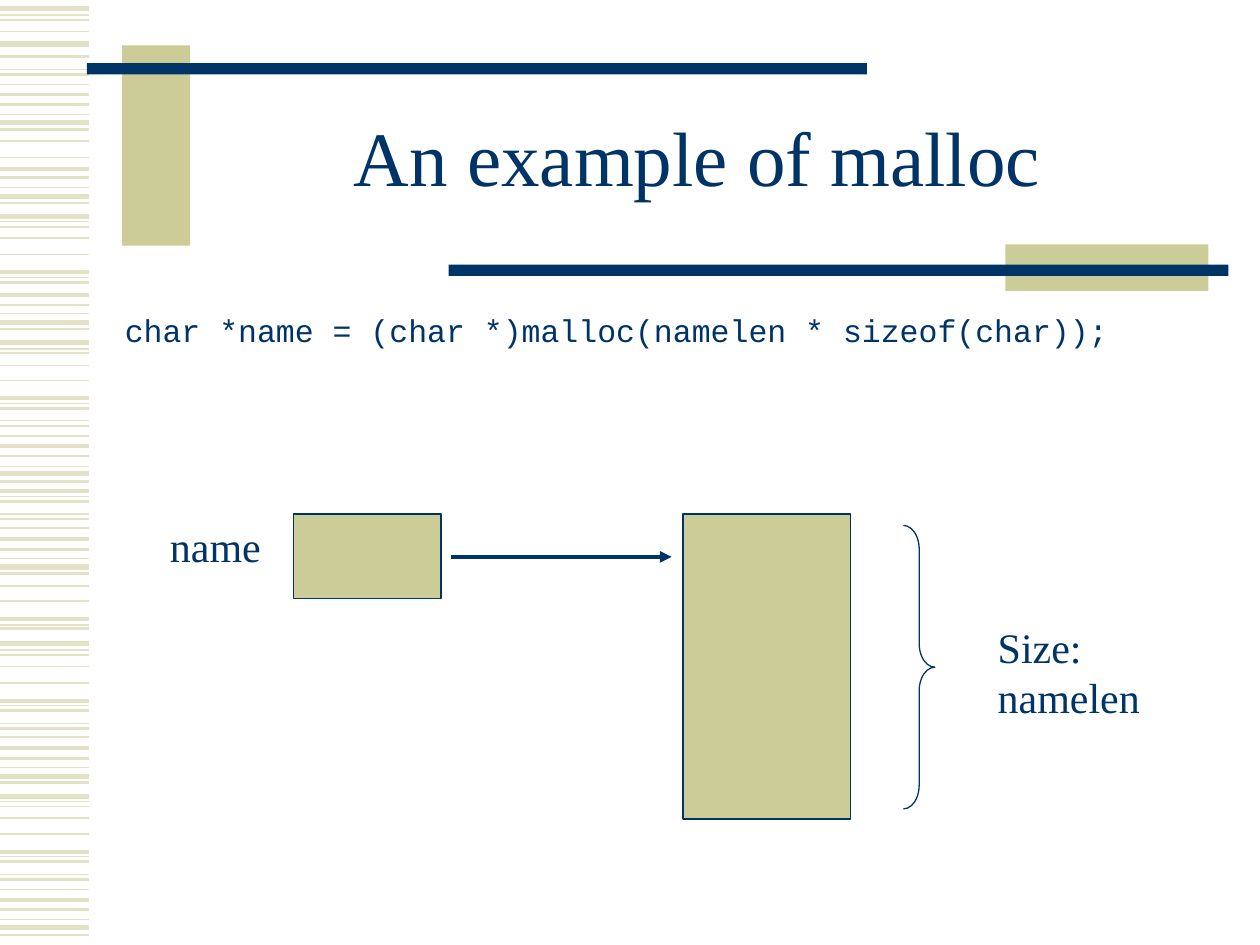
from lxml import etree
from pptx import Presentation
from pptx.dml.color import RGBColor
from pptx.enum.shapes import MSO_CONNECTOR, MSO_SHAPE
from pptx.enum.text import MSO_ANCHOR, MSO_AUTO_SIZE, PP_ALIGN
from pptx.oxml.ns import qn
from pptx.util import Inches, Pt

STRAIGHT = MSO_CONNECTOR.STRAIGHT
RECT, BRACE = MSO_SHAPE.RECTANGLE, MSO_SHAPE.RIGHT_BRACE
MIDDLE, TOP = MSO_ANCHOR.MIDDLE, MSO_ANCHOR.TOP
NO_FIT, GROW = MSO_AUTO_SIZE.NONE, MSO_AUTO_SIZE.SHAPE_TO_FIT_TEXT
CENTER, LEFT = PP_ALIGN.CENTER, PP_ALIGN.LEFT
NAVY, KHAKI, PALE = "003366", "CCCC99", "E3E2C7"
SERIF, MONO = "Times New Roman", "Courier New"


def rgb(value):
    return RGBColor.from_string(value)


def add_run(p, text, size, font):
    r = p.add_run()
    r.text = text
    r.font.size = Pt(size)
    r.font.name = font
    r.font.color.rgb = rgb(NAVY)


prs = Presentation()
prs.slide_width, prs.slide_height = Inches(10), Inches(7.5)
s = prs.slides.add_slide(prs.slide_layouts[1])

stripes = {
    0.75: [0.12, 0.55, 0.91, 1.49, 1.76, 2.2, 2.49, 2.77, 3.2, 3.34, 3.7, 3.94,
           4.08, 4.43, 4.96, 5.16, 5.6, 5.74, 6.09, 6.36, 6.8, 6.94, 7.3],
    1: [0.16, 0.25, 0.67, 1.12, 1.25, 1.8, 1.89, 2.02, 2.8, 2.9, 3.02, 3.46,
        4.19, 4.65, 4.77, 5.2, 5.29, 5.42, 5.85, 6.4, 6.49, 6.62, 7.06],
    1.5: [0.45, 0.59, 0.83, 1.03, 1.41, 1.61, 2.24, 2.42, 2.61, 3.24, 3.38,
          3.62, 3.82, 3.98, 4.12, 4.36, 4.55, 4.99, 5.64, 5.78, 6.02, 6.21,
          6.84, 6.98, 7.22, 7.42],
    2.25: [0.75, 1.34, 2.16, 2.34, 3.16, 3.54, 3.9, 4.28, 4.91, 5.56, 5.94,
           6.76, 7.14],
    3: [0.07, 0.35, 0.97, 1.56, 1.72, 2.56, 2.72, 3.76, 4.5, 5.11, 6.16, 6.32,
        7.36],
}
lines = [(0, 0.71, y, PALE, width) for width, ys in stripes.items() for y in ys]
lines.append((3.58, 5.33, 4.42, NAVY, 2.25))
for x1, x2, y, color, width in lines:
    line = s.shapes.add_connector(STRAIGHT, Inches(x1), Inches(y), Inches(x2), Inches(y))
    line.line.color.rgb = rgb(color)
    line.line.width = Pt(width)
    etree.SubElement(line._element.spPr, qn("a:effectLst"))
arrow = line
etree.SubElement(arrow.line._get_or_add_ln(), qn("a:tailEnd"), type="triangle")

shapes = [
    (RECT, 0.97, 0.36, 0.54, 1.59, KHAKI, None),
    (RECT, 0.69, 0.5, 6.19, 0.09, NAVY, None),
    (RECT, 7.98, 1.94, 1.61, 0.37, KHAKI, None),
    (RECT, 3.56, 2.1, 6.19, 0.09, NAVY, None),
    (RECT, 5.42, 4.08, 1.33, 2.42, KHAKI, NAVY),
    (RECT, 2.33, 4.08, 1.17, 0.67, KHAKI, NAVY),
    (BRACE, 7.17, 4.17, 0.25, 2.25, None, NAVY),
]
for kind, x, y, w, h, fill, outline in shapes:
    sp = s.shapes.add_shape(kind, Inches(x), Inches(y), Inches(w), Inches(h))
    sp.shadow.inherit = False
    if fill:
        sp.fill.solid()
        sp.fill.fore_color.rgb = rgb(fill)
    else:
        sp.fill.background()
    if outline:
        sp.line.color.rgb = rgb(outline)
        sp.line.width = Pt(0.75)
    else:
        sp.line.fill.background()
brace = sp
brace.adjustments[0] = 0.75
brace.adjustments[1] = 0.5

title, body = s.shapes.title, s.placeholders[1]
places = [
    (title, 1.5, 0.67, 8.07, 1.25, MIDDLE, CENTER),
    (body, 0.89, 2.42, 8.7, 4.24, TOP, LEFT),
]
for sp, x, y, w, h, anchor, align in places:
    sp.left, sp.top, sp.width, sp.height = Inches(x), Inches(y), Inches(w), Inches(h)
    tf = sp.text_frame
    tf.word_wrap = True
    tf.auto_size = NO_FIT
    tf.vertical_anchor = anchor
    tf.paragraphs[0].alignment = align

p = title.text_frame.paragraphs[0]
p.line_spacing = 0.85
add_run(p, "An example of malloc", 44, SERIF)

p = body.text_frame.paragraphs[0]
p.space_before = Pt(3.6)
pPr = p._p.get_or_add_pPr()
pPr.set("marL", str(Inches(0.38)))
pPr.set("indent", str(Inches(-0.38)))
etree.SubElement(pPr, qn("a:buNone"))
add_run(p, "char *name = (char *)malloc(namelen * sizeof(char));", 18, MONO)

labels = [
    (1.25, 4.08, 0.92, 0.5, ["name"]),
    (7.82, 4.88, 1.33, 0.9, ["Size:", "namelen"]),
]
for x, y, w, h, texts in labels:
    tf = s.shapes.add_textbox(Inches(x), Inches(y), Inches(w), Inches(h)).text_frame
    tf.word_wrap = False
    tf.auto_size = GROW
    for i, text in enumerate(texts):
        p = tf.add_paragraph() if i else tf.paragraphs[0]
        add_run(p, text, 24, SERIF)

prs.save("out.pptx")
